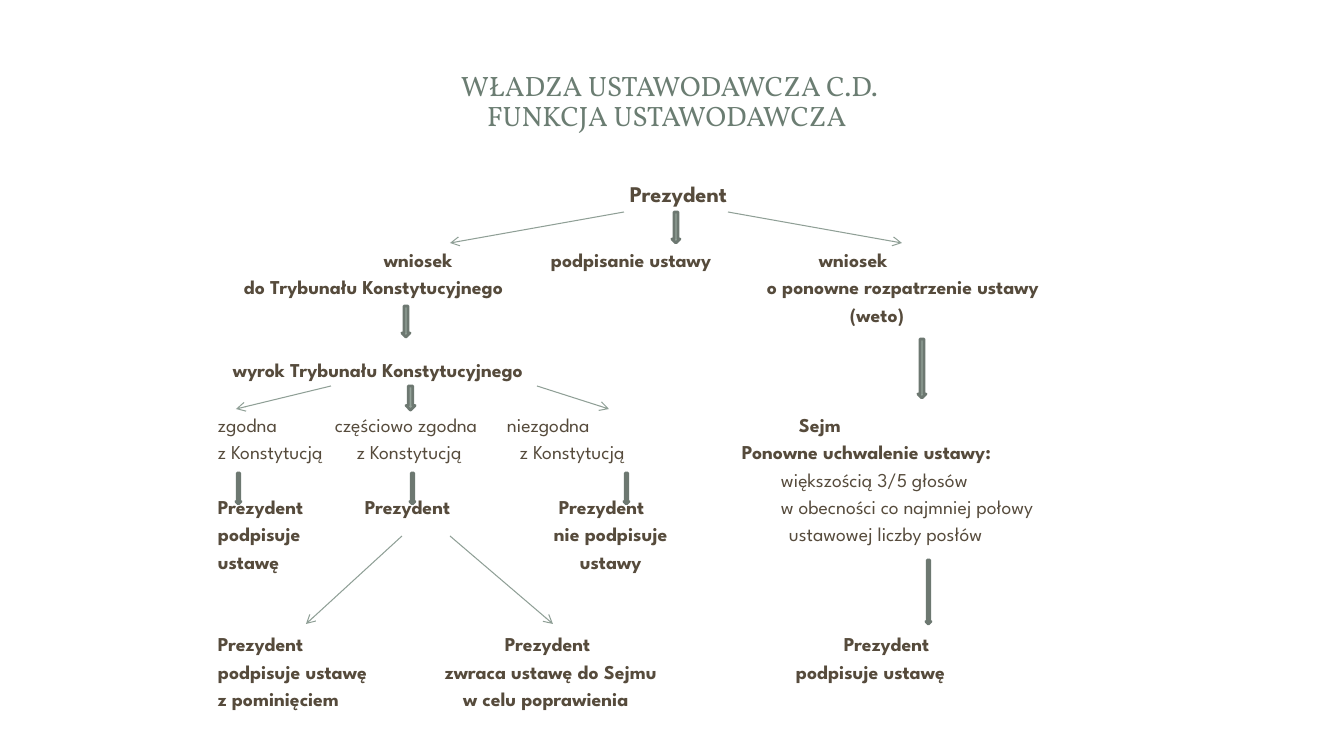
from pptx import Presentation
from pptx import util as u
from pptx.dml.color import RGBColor
from pptx.enum import shapes, text
from pptx.oxml.ns import qn
from lxml import etree

COLORS = {"title": "6B7D72", "text": "564B3C", "line": "8F9F96",
          "arrow": "93A299", "edge": "6D7871", "white": "FFFFFF"}
TITLE_FONT, BODY_FONT = "Vollkorn", "League Spartan"
TITLE = ["WŁADZA USTAWODAWCZA C.D.", "FUNKCJA USTAWODAWCZA "]
TITLE_BOX = (62, 45, 1215, 115)
FIRST_ROW_TOP, ROW_PITCH = 244, 27.45

ROOT = ("Prezydent", 630, 180)
NODES = [
    (0, [("wniosek", 384, True), ("do Trybunału Konstytucyjnego", 244, True)]),
    (0, [("podpisanie ustawy", 551, True)]),
    (0, [("wniosek", 819, True), ("o ponowne rozpatrzenie ustawy", 767, True),
         ("(weto)", 850, True)]),
    (4, [("wyrok Trybunału Konstytucyjnego", 233, True)]),
    (6, [("zgodna", 218, False), ("z Konstytucją", 218, False)]),
    (6, [("częściowo zgodna", 335, False), ("z Konstytucją", 357, False)]),
    (6, [("niezgodna", 507, False), ("z Konstytucją", 520, False)]),
    (6, [("Sejm", 799, True), ("Ponowne uchwalenie ustawy:", 742, True),
         ("większością 3/5 głosów", 781, False),
         ("w obecności co najmniej połowy", 781, False),
         ("ustawowej liczby posłów", 789, False)]),
    (9, [("Prezydent", 218, True), ("podpisuje", 218, True), ("ustawę", 218, True)]),
    (9, [("Prezydent", 365, True)]),
    (9, [("Prezydent", 559, True), ("nie podpisuje", 554, True), ("ustawy", 580, True)]),
    (14, [("Prezydent", 218, True), ("podpisuje ustawę", 218, True),
          ("z pominięciem", 218, True)]),
    (14, [("Prezydent", 505, True), ("zwraca ustawę do Sejmu", 445, True),
          ("w celu poprawienia", 463, True)]),
    (14, [("Prezydent", 844, True), ("podpisuje ustawę", 796, True)]),
]
BRANCHES = [(624, 212, 450, 243), (728, 212, 902, 243), (331, 386, 236, 409),
            (537, 386, 609, 409), (402, 536, 306, 624), (450, 536, 553, 624)]
BLOCK_ARROWS = [(672, 212, 8, 31), (402, 306, 8, 31), (406, 386, 9, 24),
                (236, 473, 5, 31), (410, 473, 5, 31), (624, 473, 5, 31),
                (918, 339, 8, 59), (926, 560, 5, 64)]


def px(value):
    return u.Emu(round(value * 914400 / 100.8))


def color(name):
    return RGBColor.from_string(COLORS[name])


def add_run(paragraph, wording, font, size, color_name, bold=False):
    run = paragraph.add_run()
    run.text = wording
    run.font.name, run.font.size, run.font.bold = font, u.Pt(size), bold
    run.font.color.rgb = color(color_name)


def clear_margins(frame):
    frame.margin_left = frame.margin_right = 0
    frame.margin_top = frame.margin_bottom = 0
    frame.word_wrap = True


def add_node(slide, top, lines, size=14):
    left = min(x for _, x, _ in lines)
    right = max(x + len(wording) * size * 0.8 for wording, x, _ in lines)
    box = slide.shapes.add_textbox(px(left), px(top), px(right - left),
                                   px(len(lines) * ROW_PITCH))
    frame = box.text_frame
    clear_margins(frame)
    for index, (wording, x, bold) in enumerate(lines):
        paragraph = frame.add_paragraph() if index else frame.paragraphs[0]
        paragraph.line_spacing = u.Pt(19.6)
        paragraph._p.get_or_add_pPr().set("marL", str(px(x - left)))
        add_run(paragraph, wording, BODY_FONT, size, "text", bold)


def add_branch(slide, ends):
    branch = slide.shapes.add_connector(shapes.MSO_CONNECTOR.STRAIGHT, *map(px, ends))
    branch.line.color.rgb = color("line")
    branch.line.width = u.Pt(0.75)
    etree.SubElement(branch.line._get_or_add_ln(), qn("a:tailEnd"), type="arrow")
    etree.SubElement(branch._element.spPr, qn("a:effectLst"))


def add_block_arrow(slide, place):
    arrow = slide.shapes.add_shape(shapes.MSO_SHAPE.DOWN_ARROW, *map(px, place))
    arrow.shadow.inherit = False
    arrow.fill.solid()
    arrow.fill.fore_color.rgb = color("arrow")
    arrow.line.color.rgb = color("edge")
    arrow.line.width = u.Pt(2)


def add_title(slide):
    title = slide.shapes.title
    title.left, title.top, title.width, title.height = map(px, TITLE_BOX)
    frame = title.text_frame
    frame.vertical_anchor = text.MSO_ANCHOR.MIDDLE
    paragraph = frame.paragraphs[0]
    paragraph.alignment = text.PP_ALIGN.CENTER
    paragraph.line_spacing = 0.9
    for index, wording in enumerate(TITLE):
        if index:
            paragraph.add_line_break()
        add_run(paragraph, wording, TITLE_FONT, 20, "title")


def main():
    presentation = Presentation()
    presentation.slide_width, presentation.slide_height = px(1344), px(756)
    slide = presentation.slides.add_slide(presentation.slide_layouts[5])
    slide.background.fill.solid()
    slide.background.fill.fore_color.rgb = color("white")
    add_title(slide)
    wording, left, top = ROOT
    add_node(slide, top, [(wording, left, True)], 16)
    for row, lines in NODES:
        add_node(slide, FIRST_ROW_TOP + row * ROW_PITCH, lines)
    for ends in BRANCHES:
        add_branch(slide, ends)
    for place in BLOCK_ARROWS:
        add_block_arrow(slide, place)
    presentation.save("out.pptx")


if __name__ == "__main__":
    main()
